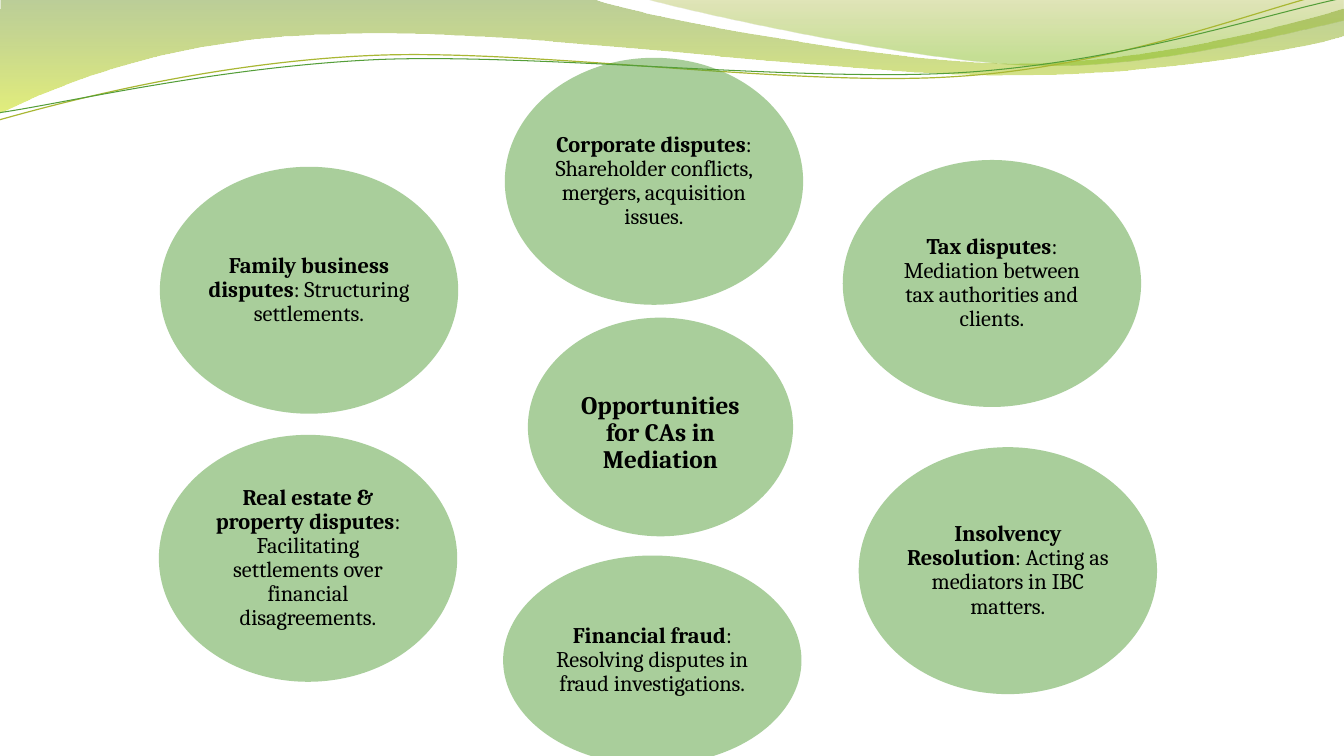
from dataclasses import dataclass
from itertools import chain, islice

from lxml import etree
from pptx import Presentation
from pptx.dml.color import RGBColor
from pptx.enum.shapes import MSO_SHAPE
from pptx.enum.text import MSO_ANCHOR, PP_ALIGN
from pptx.oxml.ns import qn
from pptx.util import Pt

ELLIPSE = MSO_SHAPE.OVAL
MIDDLE = MSO_ANCHOR.MIDDLE
CENTER = PP_ALIGN.CENTER


@dataclass(frozen=True)
class Theme:
    font: str = "Cambria"
    text: str = "000000"
    green: str = "549E39"
    olive: str = "A9B733"
    # Gradient stops: position, colour, opacity in percent
    wide_wave: tuple = ((0, "69921C", 45), (1, "CCE10F", 55))
    right_wave: tuple = ((0, "9BAA1A", 30), (0.8, "81BA16", 45))
    bubble_opacity: int = 50
    hub_size: int = 18
    topic_size: int = 16


THEME = Theme()
SLIDE_BOX = (0, 0, 960, 540)
TOPIC_SIZE = (213.1, 176.4)
LINE_ROTATION = 357.3

# Each outline is a start point, then segments: one point for a line, three for a curve.
FILLED_WAVES = [
    (THEME.wide_wave, (0, 0), [
        [(422.6, -0.7)],
        [(456.5, 12.2), (636.5, 45.4), (727.9, 45.4)],
        [(818.6, 45.4), (919.4, 18.7), (959.8, 6.5)],
        [(960.5, 25.9)],
        [(943.9, 31.7), (834.5, 54.7), (715.7, 54)],
        [(596.9, 54), (366.5, 20.2), (247, 24.5)],
        [(123.1, 25.9), (43.9, 59.8), (-1.4, 81.4)],
        [(0, 0)],
    ]),
    (THEME.right_wave, (459.4, -0.7), [
        [(488.9, 7.9), (654.5, 44.6), (738, 46.8)],
        [(820.8, 49.7), (923, 23), (959.8, 15.1)],
        [(959.8, 0)],
        [(459.4, -0.7)],
    ]),
]
# Points before the rotation of the lines
WAVE_LINES = [
    (THEME.olive, 0.85, (-2.3, 63.1), [
        [(44.4, 52.3), (151.4, 29.2), (266, 29.6)],
        [(379.8, 29.9), (567, 66.8), (682.4, 64.3)],
        [(798.6, 62.6), (901.9, 25.7), (959.4, 15.4)],
    ]),
    (THEME.green, 0.75, (-2, 57.9), [
        [(43.6, 53.6), (157.1, 32.3), (271.6, 32.7)],
        [(386.9, 33.8), (572.2, 63.4), (686.9, 61.6)],
        [(801.6, 59.8), (904.7, 30.1), (961.3, 21.2)],
    ]),
]

HUB = ((377.1, 226.9, 189.4, 156.2), "Opportunities for CAs in Mediation")
TOPICS = [
    ((360.6, 41.3, *TOPIC_SIZE), "Corporate disputes",
     ": Shareholder conflicts, mergers, acquisition issues."),
    ((602, 114.3, *TOPIC_SIZE), "Tax disputes",
     ": Mediation between tax authorities and clients."),
    ((613.4, 319.4, *TOPIC_SIZE), "Insolvency Resolution",
     ": Acting as mediators in IBC matters."),
    ((359.4, 396.8, TOPIC_SIZE[0], 149.8), "Financial fraud",
     ": Resolving disputes in fraud investigations."),
    ((113.5, 310.6, *TOPIC_SIZE), "Real estate & property disputes",
     ": Facilitating settlements over financial disagreements."),
    ((114.2, 119.1, *TOPIC_SIZE), "Family business disputes",
     ": Structuring settlements."),
]


def color(value):
    return RGBColor.from_string(value)


def apply_format(target, values):
    for name, value in values.items():
        setattr(target, name, value)


def set_opacity(shape, percents):
    """Give each colour of the shape's fill, in order, its opacity."""
    colors = shape._element.spPr.iter(qn("a:srgbClr"))
    for element, percent in zip(list(colors), percents):
        etree.SubElement(element, qn("a:alpha"), val=str(percent * 1000))


def bend_segments(shape, segments):
    """Merge the three line steps of each curved segment into one Bézier step."""
    steps = iter(list(shape._element.spPr.iter(qn("a:lnTo"))))
    for segment in segments:
        group = list(islice(steps, len(segment)))
        if len(group) == 3:
            curve = etree.Element(qn("a:cubicBezTo"))
            group[0].addprevious(curve)
            for step in group:
                curve.append(step[0])
                step.getparent().remove(step)


def add_outline(slide, box, start, segments, close):
    left, top = box[:2]
    points = [(Pt(left + x), Pt(top + y)) for x, y in chain([start], *segments)]
    builder = slide.shapes.build_freeform(*points[0])
    builder.add_line_segments(points[1:], close=close)
    shape = builder.convert_to_shape()
    shape.shadow.inherit = False
    bend_segments(shape, segments)
    return shape


def add_waves(slide, box):
    for stops, start, segments in FILLED_WAVES:
        wave = add_outline(slide, box, start, segments, close=True)
        wave.line.fill.background()
        wave.fill.gradient()
        wave.fill.gradient_angle = 270
        for stop, (position, value, _) in zip(wave.fill.gradient_stops, stops):
            stop.position = position
            stop.color.rgb = color(value)
        set_opacity(wave, [opacity for _, _, opacity in stops])
    for value, width, start, segments in WAVE_LINES:
        wave = add_outline(slide, box, start, segments, close=False)
        wave.rotation = LINE_ROTATION
        wave.fill.background()
        wave.line.color.rgb = color(value)
        wave.line.width = Pt(width)


def add_bubble(slide, box, size, title, detail="", inset=1.6, top_inset=1.6):
    bubble = slide.shapes.add_shape(ELLIPSE, *(Pt(length) for length in box))
    bubble.shadow.inherit = False
    bubble.line.fill.background()
    bubble.fill.solid()
    bubble.fill.fore_color.rgb = color(THEME.green)
    set_opacity(bubble, [THEME.bubble_opacity])
    frame = bubble.text_frame
    apply_format(frame, {
        "word_wrap": True, "vertical_anchor": MIDDLE,
        "margin_left": Pt(inset), "margin_right": Pt(inset),
        "margin_top": Pt(top_inset), "margin_bottom": Pt(inset),
    })
    paragraph = frame.paragraphs[0]
    apply_format(paragraph, {"alignment": CENTER, "line_spacing": 0.9})
    for text, bold in ((title, True), (detail, False)):
        if text:
            run = paragraph.add_run()
            run.text = text
            apply_format(run.font, {"name": THEME.font, "size": Pt(size), "bold": bold})
            run.font.color.rgb = color(THEME.text)


def add_opportunities(slide, box):
    left, top = box[:2]

    def place(bubble_box):
        x, y, width, height = bubble_box
        return left + x, top + y, width, height

    hub_box, hub_title = HUB
    add_bubble(slide, place(hub_box), THEME.hub_size, hub_title, inset=2, top_inset=11)
    for topic_box, title, detail in TOPICS:
        add_bubble(slide, place(topic_box), THEME.topic_size, title, detail)


def main():
    presentation = Presentation()
    presentation.slide_width, presentation.slide_height = map(Pt, SLIDE_BOX[2:])
    slide = presentation.slides.add_slide(presentation.slide_layouts[6])
    add_waves(slide, SLIDE_BOX)
    add_opportunities(slide, SLIDE_BOX)
    presentation.save("out.pptx")


if __name__ == "__main__":
    main()
